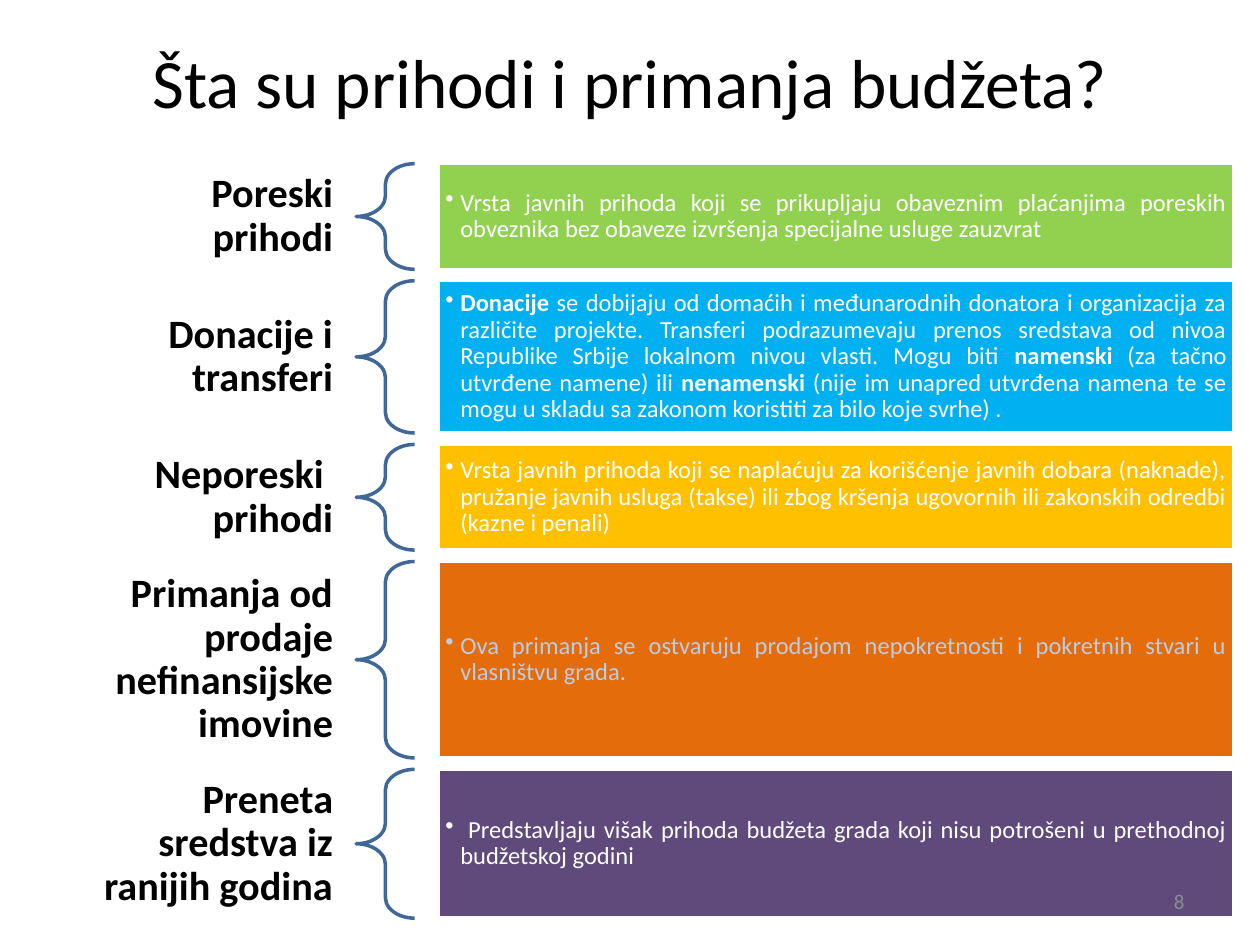
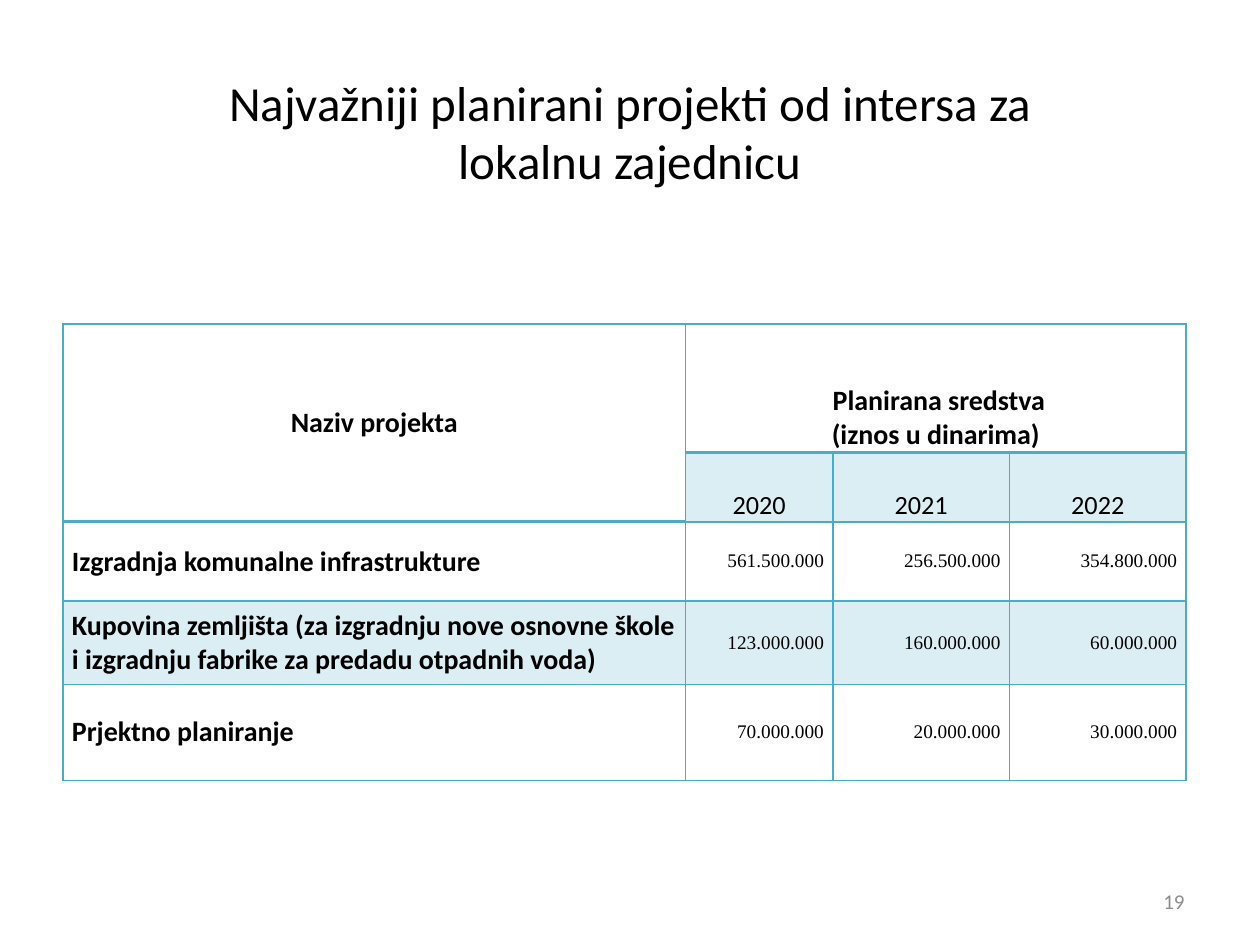
"""Builds two slides on city budget revenues and planned local projects."""
import dataclasses

import pptx
import pptx.dml.color
import pptx.enum.shapes
import pptx.enum.text
import pptx.oxml
import pptx.oxml.ns
import pptx.presentation
import pptx.slide
import pptx.table
import pptx.text.text
import pptx.util

Cm = pptx.util.Cm
Pt = pptx.util.Pt
ALIGN = pptx.enum.text.PP_ALIGN
ANCHOR = pptx.enum.text.MSO_ANCHOR
SHAPE = pptx.enum.shapes.MSO_SHAPE

COLORS = {
    "text": "000000",
    "white": "FFFFFF",
    "muted": "8C8C8C",
    "pale": "B9CDE5",
    "brace": "3F6797",
    "green": "92D050",
    "blue": "00B0F0",
    "yellow": "FFC000",
    "orange": "E46C0A",
    "purple": "604A7B",
    "grid": "4BACC6",
}
SANS = "Calibri"
SERIF = "Times New Roman"


@dataclasses.dataclass
class Revenue:
    label: str
    text: str
    height: float
    fill: str
    color: str = "white"


@dataclasses.dataclass
class CellStyle:
    size: float
    bold: bool = False
    name: str = SANS
    align: ALIGN = ALIGN.CENTER
    anchor: ANCHOR = ANCHOR.MIDDLE


REVENUES = [
    Revenue("Poreski prihodi",
            "Vrsta javnih prihoda koji se prikupljaju obaveznim plaćanjima poreskih "
            "obveznika bez obaveze izvršenja specijalne usluge zauzvrat", 2.13, "green"),
    Revenue("Donacije i\ntransferi",
            "**Donacije** se dobijaju od domaćih i međunarodnih donatora i organizacija za "
            "različite projekte. Transferi podrazumevaju prenos sredstava od nivoa Republike "
            "Srbije lokalnom nivou vlasti. Mogu biti **namenski** (za tačno utvrđene namene) "
            "ili **nenamenski **(nije im unapred utvrđena namena te se mogu u skladu sa "
            "zakonom koristiti za bilo koje svrhe) .", 3.07, "blue"),
    Revenue("Neporeski \nprihodi",
            "Vrsta javnih prihoda koji se naplaćuju za korišćenje javnih dobara (naknade), "
            "pružanje javnih usluga (takse) ili zbog kršenja ugovornih ili zakonskih odredbi "
            "(kazne i penali)", 2.13, "yellow"),
    Revenue("Primanja od prodaje nefinansijske imovine",
            "Ova primanja se ostvaruju prodajom nepokretnosti i pokretnih stvari u "
            "vlasništvu grada.", 3.96, "orange", "pale"),
    Revenue("Preneta sredstva iz ranijih godina",
            " Predstavljaju višak prihoda budžeta grada koji nisu potrošeni u prethodnoj "
            "budžetskoj godini", 3.0, "purple"),
]
REVENUE_TOP, REVENUE_GAP = 3.3, 0.23

PROJECTS = [
    ["Naziv projekta", " Planirana sredstva\n(iznos u dinarima)", "", ""],
    ["", "2020", "2021", "2022"],
    ["Izgradnja komunalne infrastrukture", "561.500.000", "256.500.000", "354.800.000"],
    ["Kupovina zemljišta (za izgradnju nove osnovne škole i izgradnju fabrike za predadu "
     "otpadnih voda)", "123.000.000", "160.000.000", "60.000.000"],
    ["Prjektno planiranje", "70.000.000", "20.000.000", "30.000.000"],
]
COLUMN_WIDTHS = [12.55, 2.97, 3.56, 3.56]
ROW_HEIGHTS = [2.59, 1.4, 1.6, 1.68, 1.93]
TINTED = {(1, 1), (1, 2), (1, 3), (3, 0), (3, 1), (3, 2), (3, 3)}
HEAVY_BOTTOM = {(1, 0), (0, 1), (0, 2), (0, 3)}

NAME_HEAD = CellStyle(16, bold=True)
FUNDS_HEAD = CellStyle(16, bold=True, anchor=ANCHOR.BOTTOM)
YEAR = CellStyle(15, anchor=ANCHOR.BOTTOM)
PROJECT = CellStyle(16, bold=True, align=ALIGN.LEFT)
AMOUNT = CellStyle(11, name=SERIF, align=ALIGN.RIGHT)


def rgb(key: str) -> pptx.dml.color.RGBColor:
    return pptx.dml.color.RGBColor.from_string(COLORS[key])


def format_paragraph(p: pptx.text.text._Paragraph, size: float, color: str = "text",
                     align: ALIGN = ALIGN.CENTER, bold: bool | None = None,
                     name: str = SANS) -> None:
    p.alignment = align
    p.font.size = Pt(size)
    p.font.name = name
    p.font.bold = bold
    p.font.color.rgb = rgb(color)


def set_frame(tf: pptx.text.text.TextFrame, side: float, end: float) -> None:
    tf.word_wrap = True
    tf.vertical_anchor = ANCHOR.MIDDLE
    tf.margin_left = tf.margin_right = Cm(side)
    tf.margin_top = tf.margin_bottom = Cm(end)


def add_slide(prs: pptx.presentation.Presentation, title: str, size: float,
              height: float, number: int) -> pptx.slide.Slide:
    s = prs.slides.add_slide(prs.slide_layouts[5])
    sp = s.shapes.title
    sp.left, sp.top, sp.width, sp.height = Cm(1.27), Cm(0.76), Cm(22.86), Cm(height)
    sp.text_frame.auto_size = pptx.enum.text.MSO_AUTO_SIZE.NONE
    set_frame(sp.text_frame, 0.25, 0.13)
    p = sp.text_frame.paragraphs[0]
    p.text = title
    format_paragraph(p, size)
    return s


def add_number(s: pptx.slide.Slide, number: int) -> None:
    tf = s.shapes.add_textbox(Cm(18.2), Cm(17.65), Cm(5.93), Cm(1.02)).text_frame
    set_frame(tf, 0.25, 0.13)
    p = tf.paragraphs[0]
    p.text = str(number)
    format_paragraph(p, 12, "muted", ALIGN.RIGHT)


def add_label(s: pptx.slide.Slide, revenue: Revenue, top: float) -> None:
    sp = s.shapes.add_textbox(Cm(1.27), Cm(top), Cm(5.9), Cm(revenue.height))
    set_frame(sp.text_frame, 0.45, 0.15)
    p = sp.text_frame.paragraphs[0]
    p.text = revenue.label
    p.line_spacing = 0.9
    format_paragraph(p, 23, align=ALIGN.RIGHT, bold=True)


def add_brace(s: pptx.slide.Slide, revenue: Revenue, top: float) -> None:
    sp = s.shapes.add_shape(SHAPE.LEFT_BRACE, Cm(7.18), Cm(top), Cm(1.18), Cm(revenue.height))
    sp.shadow.inherit = False
    sp.adjustments[0] = 0.35
    sp.fill.background()
    sp.line.color.rgb = rgb("brace")
    sp.line.width = Pt(2)


def add_description(s: pptx.slide.Slide, revenue: Revenue, top: float) -> None:
    sp = s.shapes.add_shape(SHAPE.RECTANGLE, Cm(8.83), Cm(top), Cm(16.05), Cm(revenue.height))
    sp.shadow.inherit = False
    sp.fill.solid()
    sp.fill.fore_color.rgb = rgb(revenue.fill)
    sp.line.color.rgb = rgb("white")
    sp.line.width = Pt(2)
    set_frame(sp.text_frame, 0.15, 0.15)
    p = sp.text_frame.paragraphs[0]
    p.line_spacing = 0.9
    format_paragraph(p, 14, revenue.color, ALIGN.JUSTIFY)
    add_bullet(p)
    for i, part in enumerate(revenue.text.split("**")):
        if part:
            r = p.add_run()
            r.text = part
            r.font.bold = i % 2 == 1


def add_bullet(p: pptx.text.text._Paragraph) -> None:
    pPr = p._p.get_or_add_pPr()
    pPr.set("marL", str(Cm(0.3)))
    pPr.set("indent", str(-Cm(0.3)))
    bullet = pptx.oxml.parse_xml(f'<a:buChar {pptx.oxml.ns.nsdecls("a")} char="•"/>')
    pPr.find(pptx.oxml.ns.qn("a:defRPr")).addprevious(bullet)


def cell_style(row: int, col: int) -> CellStyle:
    if row == 0:
        return FUNDS_HEAD if col else NAME_HEAD
    if row == 1:
        return YEAR
    return AMOUNT if col else PROJECT


def set_borders(cell: pptx.table._Cell, row: int, col: int) -> None:
    widths = {
        "L": 1,
        "R": 1,
        "T": 2 if (row - 1, col) in HEAVY_BOTTOM else 1,
        "B": 2 if (row, col) in HEAVY_BOTTOM else 1,
    }
    tcPr = cell._tc.get_or_add_tcPr()
    for i, (side, width) in enumerate(widths.items()):
        tcPr.insert(i, pptx.oxml.parse_xml(
            f'<a:ln{side} {pptx.oxml.ns.nsdecls("a")} w="{Pt(width)}"><a:solidFill>'
            f'<a:srgbClr val="{COLORS["grid"]}"/></a:solidFill></a:ln{side}>'))


def fill_cell(cell: pptx.table._Cell, tinted: bool) -> None:
    if not tinted:
        cell.fill.background()
        return
    cell.fill.solid()
    cell.fill.fore_color.rgb = rgb("grid")
    color = cell._tc.tcPr.find(".//" + pptx.oxml.ns.qn("a:srgbClr"))
    color.append(pptx.oxml.parse_xml(f'<a:alpha {pptx.oxml.ns.nsdecls("a")} val="20000"/>'))


def add_projects(s: pptx.slide.Slide) -> None:
    table = s.shapes.add_table(len(ROW_HEIGHTS), len(COLUMN_WIDTHS), Cm(1.27), Cm(6.53),
                               Cm(sum(COLUMN_WIDTHS)), Cm(sum(ROW_HEIGHTS))).table
    table.first_row = table.horz_banding = False
    for column, width in zip(table.columns, COLUMN_WIDTHS):
        column.width = Cm(width)
    for table_row, height in zip(table.rows, ROW_HEIGHTS):
        table_row.height = Cm(height)
    for row, texts in enumerate(PROJECTS):
        for col, text in enumerate(texts):
            cell, style = table.cell(row, col), cell_style(row, col)
            cell.text = text
            cell.vertical_anchor = style.anchor
            cell.margin_left = cell.margin_right = Cm(0.18)
            cell.margin_top = cell.margin_bottom = Cm(0)
            for p in cell.text_frame.paragraphs:
                format_paragraph(p, style.size, align=style.align, bold=style.bold,
                                 name=style.name)
            fill_cell(cell, (row, col) in TINTED)
            set_borders(cell, row, col)
    table.cell(0, 0).merge(table.cell(1, 0))
    table.cell(0, 1).merge(table.cell(0, 3))


def main() -> None:
    prs = pptx.Presentation()
    prs.slide_width, prs.slide_height = Cm(25.4), Cm(19.05)

    s = add_slide(prs, "Šta su prihodi i primanja budžeta?", 39.6, 1.73, 8)
    top = REVENUE_TOP
    for revenue in REVENUES:
        add_label(s, revenue, top)
        add_brace(s, revenue, top)
        add_description(s, revenue, top)
        top += revenue.height + REVENUE_GAP
    add_number(s, 8)

    s = add_slide(prs, "Najvažniji planirani projekti od intersa za\nlokalnu zajednicu",
                  28, 3.76, 19)
    add_number(s, 19)
    add_projects(s)

    prs.save("out.pptx")


if __name__ == "__main__":
    main()
